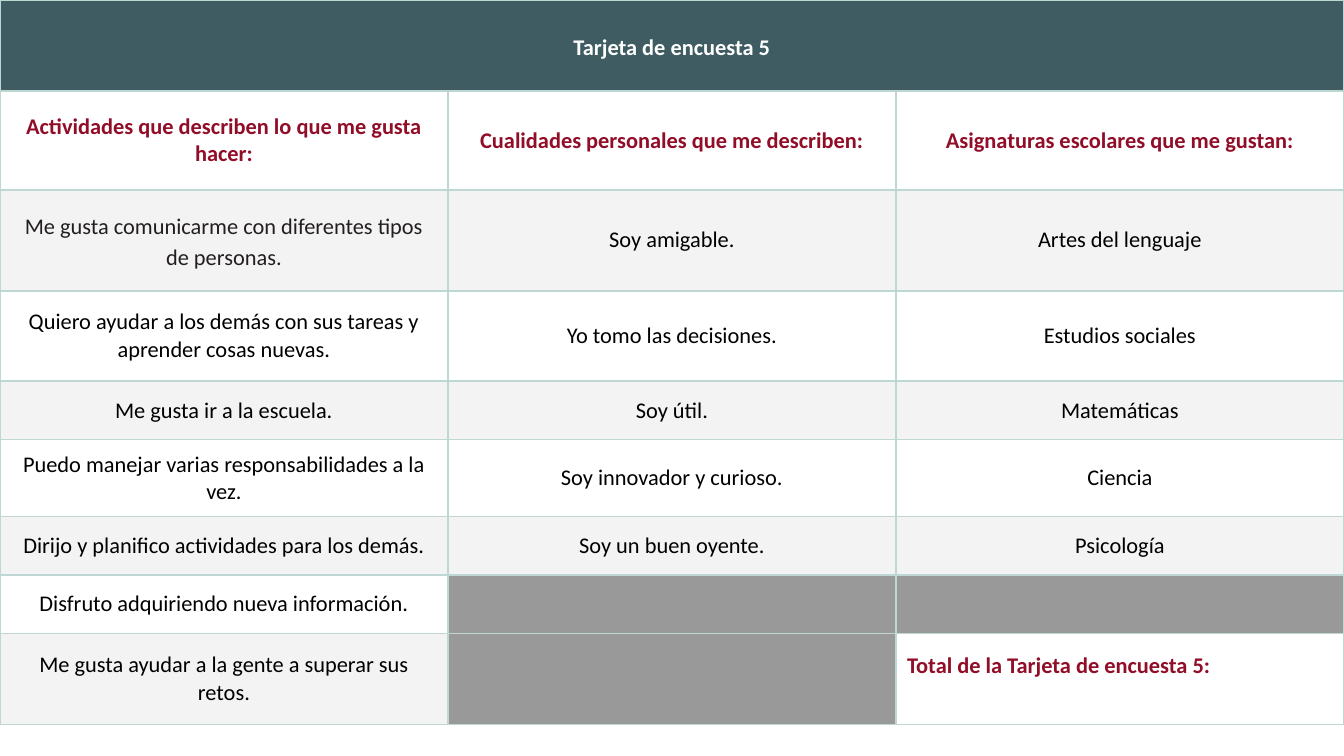
"""Build the survey card 5 slide: one full-page table of activities, qualities and subjects."""
from dataclasses import dataclass

from lxml.etree import SubElement
from pptx import Presentation
from pptx.dml.color import RGBColor as Color
from pptx.enum.text import MSO_ANCHOR as Anchor, PP_ALIGN as Align
from pptx.oxml.ns import qn
from pptx.util import Pt


@dataclass(frozen=True)
class Theme:
    font: str = "Calibri"
    size: int = 12
    teal: str = "3E5C61"
    crimson: str = "910D28"
    ink: str = "231F20"
    black: str = "000000"
    white: str = "FFFFFF"
    band: str = "F3F3F3"
    blocked: str = "999999"
    border: str = "BED7D3"


theme = Theme()


def write(cell, text, color=theme.black, bold=False, align=Align.CENTER,
          spacing=None, before=0, after=0, bottom=6):
    cell.vertical_anchor = Anchor.MIDDLE
    cell.margin_left = cell.margin_right = cell.margin_top = Pt(6)
    cell.margin_bottom = Pt(bottom)
    para = cell.text_frame.paragraphs[0]
    para.alignment = align
    para.line_spacing = spacing
    para.space_before, para.space_after = Pt(before), Pt(after)
    span = para.add_run()
    span.text = text
    span.font.name, span.font.size = theme.font, Pt(theme.size)
    span.font.bold = bold
    span.font.color.rgb = Color.from_string(color)


def paint(cell, fill):
    properties = cell._tc.get_or_add_tcPr()
    for side in ("a:lnL", "a:lnR", "a:lnT", "a:lnB"):
        line = SubElement(properties, qn(side), w=str(Pt(1)))
        SubElement(SubElement(line, qn("a:solidFill")), qn("a:srgbClr"), val=theme.border)
    cell.fill.solid()
    cell.fill.fore_color.rgb = Color.from_string(fill)


title = "Tarjeta de encuesta 5"
total = "Total de la Tarjeta de encuesta 5:"
headings = [
    "Actividades que describen lo que me gusta hacer:",
    "Cualidades personales que me describen:",
    "Asignaturas escolares que me gustan:",
]
answers = [
    ["Me gusta comunicarme con diferentes tipos de personas.", "Soy amigable.", "Artes del lenguaje"],
    ["Quiero ayudar a los demás con sus tareas y aprender cosas nuevas.",
     "Yo tomo las decisiones.", "Estudios sociales"],
    ["Me gusta ir a la escuela.", "Soy útil.", "Matemáticas"],
    ["Puedo manejar varias responsabilidades a la vez.", "Soy innovador y curioso.", "Ciencia"],
    ["Dirijo y planifico actividades para los demás.", "Soy un buen oyente.", "Psicología"],
    ["Disfruto adquiriendo nueva información.", "", ""],
    ["Me gusta ayudar a la gente a superar sus retos.", "", total],
]
heights = [48.8, 53, 54, 48.4, 31.4, 40.6, 31.2, 31.4, 48.8]

deck = Presentation()
deck.slide_width, deck.slide_height = Pt(720), Pt(405)
page = deck.slides.add_slide(deck.slide_layouts[6])
card = page.shapes.add_table(len(heights), len(headings), Pt(0), Pt(0), Pt(720), Pt(sum(heights))).table
card.first_row = card.horz_banding = False
for column in card.columns:
    column.width = Pt(720 / len(headings))
for row, height in zip(card.rows, heights):
    row.height = Pt(height)

for column in range(len(headings)):
    paint(card.cell(0, column), theme.teal)
card.cell(0, 0).merge(card.cell(0, len(headings) - 1))
write(card.cell(0, 0), title, color=theme.white, bold=True, spacing=1.15, after=6)

for column, heading in enumerate(headings):
    paint(card.cell(1, column), theme.white)
    write(card.cell(1, column), heading, color=theme.crimson, bold=True, before=10)

for row, texts in enumerate(answers, start=2):
    for column, text in enumerate(texts):
        cell = card.cell(row, column)
        if not text:
            paint(cell, theme.blocked)
        elif text == total:
            paint(cell, theme.white)
            write(cell, text, color=theme.crimson, bold=True, align=Align.LEFT, bottom=20)
        else:
            paint(cell, theme.white if row % 2 else theme.band)
            first = (row, column) == (2, 0)
            write(cell, text, color=theme.ink if first else theme.black, spacing=1.15 if first else None)

deck.save("out.pptx")
